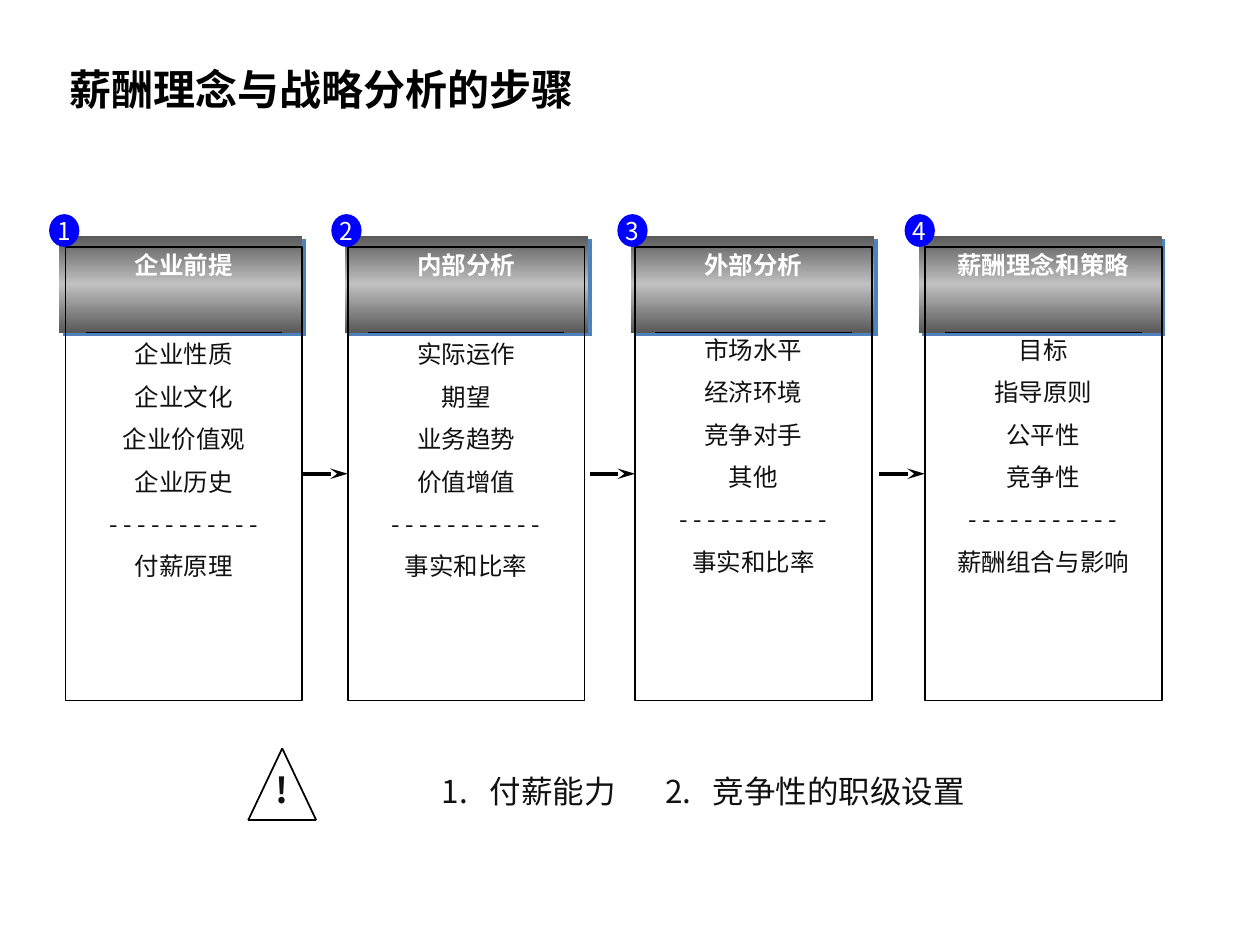
import copy

from pptx import Presentation
from pptx import util as u
from pptx.dml.color import RGBColor
from pptx.enum import shapes, text
from pptx.oxml import ns
from pptx.oxml.xmlchemy import OxmlElement

BLACK, INK, WHITE, BLUE, SHADOW = "000000", "111111", "FFFFFF", "0000FF", "4F81BD"
BAND = ["595959", "C0C0C0", "595959"]
CARD_TOP, CARD_W, CARD_H = 1.96, 1.88, 3.6
DASHES = "- - - - - - - - - - -"

# card left, band left, badge left, gap below heading (pt), heading, items, result
STEPS = [
    (0.52, 0.47, 0.39, 36, "企业前提",
     ["企业性质", "企业文化", "企业价值观", "企业历史"], "付薪原理"),
    (2.76, 2.74, 2.63, 36, "内部分析",
     ["实际运作", "期望", "业务趋势", "价值增值"], "事实和比率"),
    (5.04, 5.01, 4.90, 33.4, "外部分析",
     ["市场水平", "经济环境", "竞争对手", "其他"], "事实和比率"),
    (7.34, 7.29, 7.18, 33.4, "薪酬理念和策略",
     ["目标", "指导原则", "公平性", "竞争性"], "薪酬组合与影响"),
]


def rgb(value):
    return RGBColor.from_string(value)


def child(parent, tag, **attributes):
    """Append a new XML element and return it."""
    element = OxmlElement(tag)
    for name, value in attributes.items():
        element.set(name, str(value))
    parent.append(element)
    return element


class Deck:
    font = "Noto Sans CJK SC"

    def __init__(self):
        self.prs = Presentation()
        self.prs.slide_width, self.prs.slide_height = u.Inches(10), u.Inches(7.5)
        self.s = self.prs.slides.add_slide(self.prs.slide_layouts[5])

    def run(self, p, words, size, color, bold=False):
        r = p.add_run()
        r.text = words
        r.font.size, r.font.bold, r.font.name = u.Pt(size), bold, self.font
        r.font.color.rgb = rgb(color)
        child(r.font._element, "a:ea", typeface=self.font)

    def frame(self, sp, align, anchor=text.MSO_ANCHOR.TOP, wrap=True):
        """Prepare the text frame of a shape and return its first paragraph."""
        tf = sp.text_frame
        tf.word_wrap, tf.vertical_anchor = wrap, anchor
        tf.margin_left = tf.margin_right = u.Inches(0.1)
        tf.margin_top = tf.margin_bottom = u.Inches(0.05)
        p = tf.paragraphs[0]
        p.alignment = align
        return p

    def title(self, words, x, y, w, h):
        sp = self.s.shapes.title
        sp.left, sp.top, sp.width, sp.height = map(u.Inches, (x, y, w, h))
        self.run(self.frame(sp, text.PP_ALIGN.LEFT), words, 24, BLACK, True)

    def label(self, words, x, y, w, h, size, align, bold=False, tabs=()):
        sp = self.s.shapes.add_textbox(*map(u.Inches, (x, y, w, h)))
        p = self.frame(sp, align, wrap=bool(tabs))
        if tabs:
            stops = child(p._p.get_or_add_pPr(), "a:tabLst")
            for position in tabs:
                child(stops, "a:tab", pos=u.Inches(position), algn="l")
        self.run(p, words, size, INK, bold)

    def shape(self, kind, x, y, w, h, fill=None, line=None):
        sp = self.s.shapes.add_shape(kind, *map(u.Inches, (x, y, w, h)))
        sp.shadow.inherit = False
        if fill:
            sp.fill.solid()
            sp.fill.fore_color.rgb = rgb(fill)
        else:
            sp.fill.background()
        if line:
            sp.line.color.rgb, sp.line.width = rgb(line), u.Pt(1)
        else:
            sp.line.fill.background()
        return sp

    def band(self, x, y, w, h):
        """Gradient bar with an offset solid shadow."""
        sp = self.shape(shapes.MSO_SHAPE.RECTANGLE, x, y, w, h)
        sp.fill.gradient()
        sp.fill.gradient_angle = 270
        stops = sp._element.spPr.find(".//" + ns.qn("a:gsLst"))
        stops.insert(1, copy.deepcopy(stops[0]))
        for i, (stop, color) in enumerate(zip(sp.fill.gradient_stops, BAND)):
            stop.position, stop.color.rgb = i / 2, rgb(color)
        effects = sp._element.spPr.find(ns.qn("a:effectLst"))
        shadow = child(effects, "a:outerShdw", dist=u.Pt(2.8), dir=2700000,
                       algn="ctr", rotWithShape=0)
        child(shadow, "a:srgbClr", val=SHADOW)

    def card(self, x, gap, heading, items, result):
        sp = self.shape(shapes.MSO_SHAPE.RECTANGLE, x, CARD_TOP, CARD_W, CARD_H, line=BLACK)
        p = self.frame(sp, text.PP_ALIGN.CENTER)
        p.line_spacing = 0.9
        self.run(p, heading, 14, WHITE, True)
        for i, words in enumerate([*items, DASHES, result]):
            p = sp.text_frame.add_paragraph()
            p.alignment, p.line_spacing = text.PP_ALIGN.CENTER, 0.9
            p.space_before = u.Pt(9.1 if i else gap)
            self.run(p, words, 14, INK)
        return sp

    def badge(self, number, x, y):
        sp = self.shape(shapes.MSO_SHAPE.OVAL, x, y, 0.24, 0.26, fill=BLUE)
        p = self.frame(sp, text.PP_ALIGN.CENTER, text.MSO_ANCHOR.MIDDLE, wrap=False)
        self.run(p, str(number), 14, WHITE)

    def line(self, x1, y1, x2, y2, width=1):
        c = self.s.shapes.add_connector(
            shapes.MSO_CONNECTOR.STRAIGHT, *map(u.Inches, (x1, y1, x2, y2)))
        c.line.color.rgb, c.line.width = rgb(BLACK), u.Pt(width)
        child(c._element.spPr, "a:effectLst")
        return c

    def arrow_into(self, card, x):
        """Short arrow that ends at the left side of a card."""
        y = CARD_TOP + CARD_H / 2
        c = self.line(x - 0.36, y, x, y, 2)
        c.end_connect(card, 1)
        child(c.line._get_or_add_ln(), "a:tailEnd", type="stealth", w="med", len="lg")


def main():
    deck = Deck()
    deck.title("薪酬理念与战略分析的步骤", 0.45, 0.45, 4.47, 1.01)

    deck.label("1.\t付薪能力\t2.\t竞争性的职级设置", 3.41, 6.08, 4.53, 0.4, 18,
               text.PP_ALIGN.LEFT, tabs=(0.38, 1.77, 2.15))
    apex, left, right = (2.24, 5.94), (1.97, 6.51), (2.51, 6.51)
    for start, end in ((apex, left), (apex, right), (left, right)):
        deck.line(*start, *end)
    deck.label("!", 2.09, 6.05, 0.3, 0.44, 20, text.PP_ALIGN.CENTER, bold=True)

    for number, (x, band_x, badge_x, *content) in enumerate(STEPS, 1):
        deck.band(band_x, 1.87, 1.93, 0.77)
        card = deck.card(x, *content)
        if number > 1:
            deck.arrow_into(card, x)
        deck.line(x + 0.16, 2.64, x + 1.72, 2.64)
        deck.badge(number, badge_x, 1.7)

    deck.prs.save("out.pptx")


if __name__ == "__main__":
    main()
